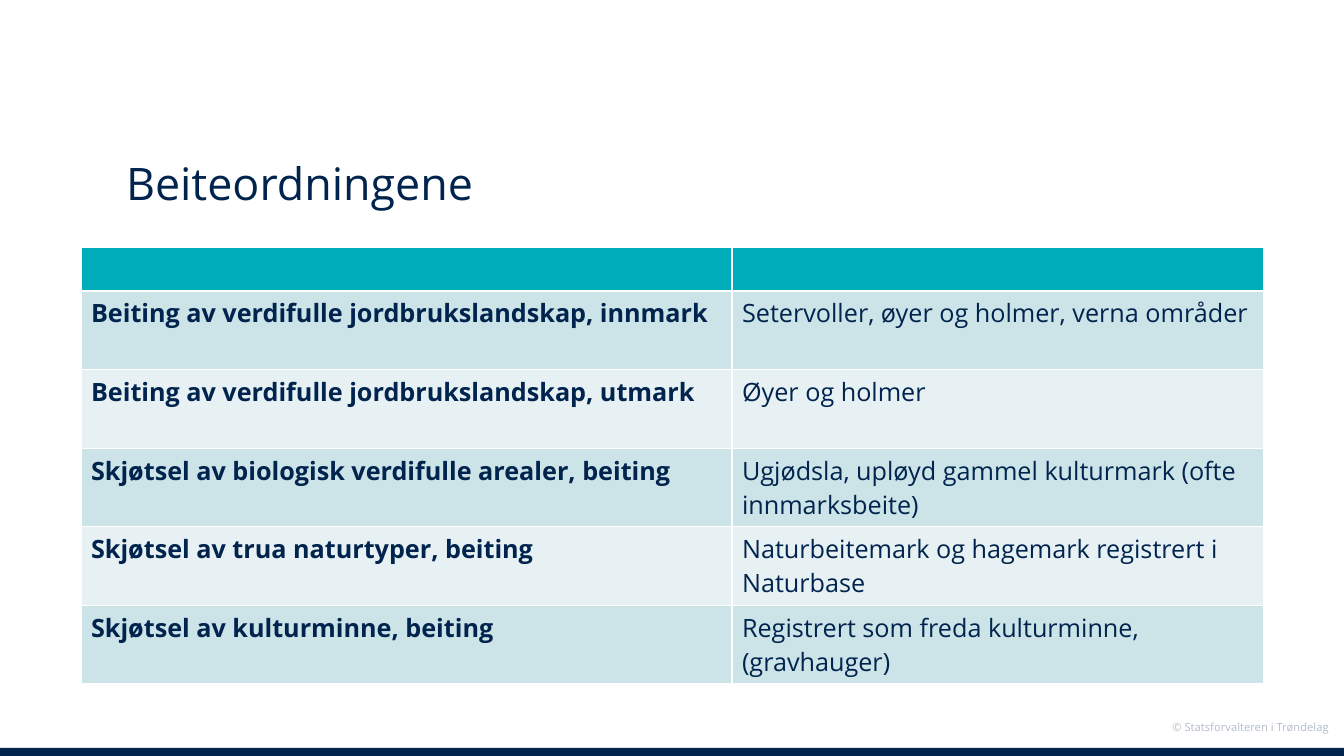
from lxml import etree
from pptx import Presentation
from pptx.dml.color import RGBColor
from pptx.enum.shapes import MSO_SHAPE as Preset
from pptx.enum.text import MSO_ANCHOR as Anchor, MSO_AUTO_SIZE as AutoSize, PP_ALIGN as Align
from pptx.oxml.ns import qn
from pptx.util import Pt

PX = 9071.43
FONT = "Open Sans"
COLORS = {
    "navy": "00244E",
    "teal": "00ADBA",
    "dark_band": "CCE3E7",
    "light_band": "E7F1F3",
    "white": "FFFFFF",
}
SCHEMES = [
    ("Beiting av verdifulle jordbrukslandskap, innmark", "Setervoller, øyer og holmer, verna områder"),
    ("Beiting av verdifulle jordbrukslandskap, utmark", "Øyer og holmer"),
    ("Skjøtsel av biologisk verdifulle arealer, beiting",
     "Ugjødsla, upløyd gammel kulturmark (ofte innmarksbeite)"),
    ("Skjøtsel av trua naturtyper, beiting", "Naturbeitemark og hagemark registrert i Naturbase"),
    ("Skjøtsel av kulturminne, beiting", "Registrert som freda kulturminne, (gravhauger)"),
]


def px(length):
    return round(length * PX)


def color(name):
    return RGBColor.from_string(COLORS[name])


def set_font(font, size, bold=False):
    font.name = FONT
    font.size = Pt(size)
    font.bold = bold
    font.color.rgb = color("navy")


def add_title(page, left, top, width, height):
    title = page.shapes.title
    title.left, title.top, title.width, title.height = map(px, (left, top, width, height))
    frame = title.text_frame
    frame.text = "Beiteordningene"
    frame.auto_size = AutoSize.NONE
    frame.vertical_anchor = Anchor.BOTTOM
    para = frame.paragraphs[0]
    para.alignment = Align.LEFT
    set_font(para.font, 32)


def add_footer(page, left, top, width, height):
    bar_height = 8
    bar = page.shapes.add_shape(
        Preset.RECTANGLE, px(left), px(top + height - bar_height), px(width), px(bar_height))
    bar.shadow.inherit = False
    bar.fill.solid()
    bar.fill.fore_color.rgb = color("navy")
    bar.line.fill.background()

    box = page.shapes.add_textbox(px(left + width - 191), px(top), px(186), px(24))
    frame = box.text_frame
    frame.word_wrap = True
    frame.text = "© Statsforvalteren i Trøndelag"
    para = frame.paragraphs[0]
    para.alignment = Align.RIGHT
    span = para.runs[0]
    set_font(span.font, 8)
    for tint in span.font._element.iter(qn("a:srgbClr")):
        etree.SubElement(tint, qn("a:alpha"), val="30000")


def add_borders(cell):
    properties = cell._tc.get_or_add_tcPr()
    for index, side in enumerate(("lnL", "lnR", "lnT", "lnB")):
        line = etree.Element(qn(f"a:{side}"), w=str(Pt(1)))
        fill = etree.SubElement(line, qn("a:solidFill"))
        etree.SubElement(fill, qn("a:srgbClr"), val=COLORS["white"])
        properties.insert(index, line)


def add_schemes(page, left, top, width, height):
    header_height, first_width = 44, 651
    rows = [("", "")] + SCHEMES
    table = page.shapes.add_table(
        len(rows), 2, px(left), px(top), px(width), px(height)).table
    table.columns[0].width = px(first_width)
    table.columns[1].width = px(width - first_width)
    row_height = (height - header_height) / len(SCHEMES)
    for row_index, texts in enumerate(rows):
        table.rows[row_index].height = px(row_height if row_index else header_height)
        band = "dark_band" if row_index % 2 else "light_band"
        for column_index, text in enumerate(texts):
            cell = table.cell(row_index, column_index)
            cell.fill.solid()
            cell.fill.fore_color.rgb = color(band if row_index else "teal")
            add_borders(cell)
            cell.text = text
            set_font(cell.text_frame.paragraphs[0].font, 18, bold=column_index == 0)


def main():
    deck = Presentation()
    deck.slide_width, deck.slide_height = px(1344), px(756)
    page = deck.slides.add_slide(deck.slide_layouts[5])
    add_footer(page, 0, 715, 1344, 41)
    add_title(page, 116, 96, 1111, 119)
    add_schemes(page, 81, 247, 1183, 437)
    deck.save("out.pptx")


if __name__ == "__main__":
    main()
